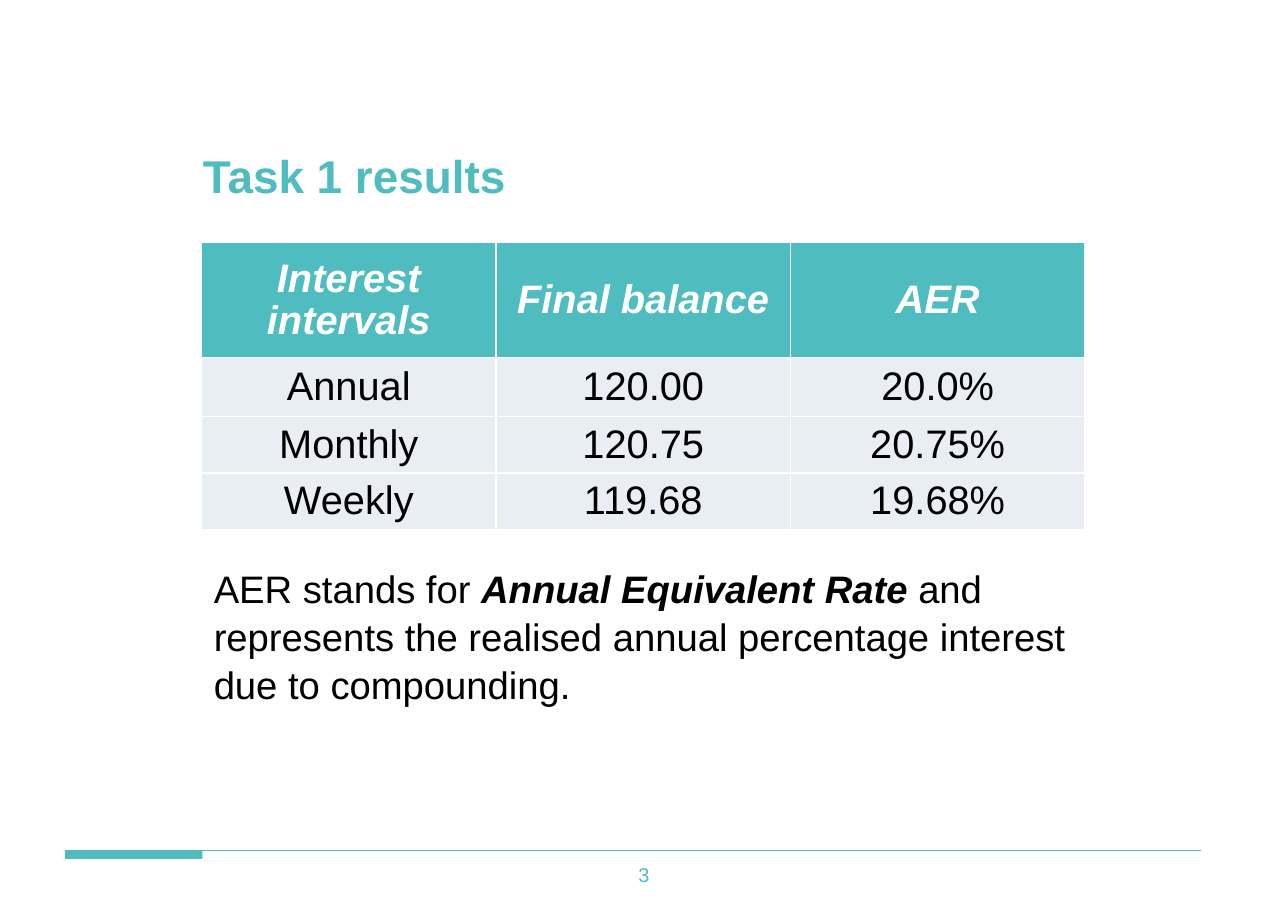
from lxml.etree import SubElement
from pptx import Presentation
from pptx.dml.color import RGBColor
from pptx.enum.shapes import MSO_CONNECTOR, MSO_SHAPE
from pptx.enum.text import MSO_ANCHOR, PP_ALIGN
from pptx.oxml.ns import qn
from pptx.util import Cm, Pt

TEAL, WHITE, BLACK, PALE = "4FBCBF", "FFFFFF", "000000", "E9EDF4"

TITLE = [("Task 1 results", {"bold": True})]
RESULTS = [
    ("Interest intervals", "Final balance", "AER"),
    ("Annual", "120.00", "20.0%"),
    ("Monthly", "120.75", "20.75%"),
    ("Weekly", "119.68", "19.68%"),
]
NOTE = [
    ("AER stands for ", {}),
    ("Annual Equivalent Rate ", {"bold": True, "italic": True}),
    ("and represents the realised annual percentage interest due to compounding.", {}),
]
PAGE = [("3", {})]

PAGE_W, PAGE_H, MARGIN = 29.7, 21, 1.5
LEFT, CONTENT_W = 4.65, 20.37
ROW_HEIGHTS = (2.65, 1.36, 1.3, 1.3)
RULE_Y = 19.6
PAGE_BOX_W = 6.93


def rgb(value):
    return RGBColor.from_string(value)


def paint(sp, color):
    sp.fill.solid()
    sp.fill.fore_color.rgb = rgb(color)


def write(tf, runs, size, color, spacing=1, align=PP_ALIGN.LEFT):
    p = tf.paragraphs[0]
    for name, value in {"alignment": align, "line_spacing": spacing}.items():
        setattr(p, name, value)
    for text, style in runs:
        r = p.add_run()
        r.text = text
        font = {"name": "Arial", "size": Pt(size), "bold": False, "italic": False}
        for name, value in (font | style).items():
            setattr(r.font, name, value)
        r.font.color.rgb = rgb(color)


def set_insets(target, left, top, right, bottom):
    insets = {"left": left, "top": top, "right": right, "bottom": bottom}
    for side, value in insets.items():
        setattr(target, f"margin_{side}", Cm(value))


def add_text(s, box, insets, runs, size, color, anchor=MSO_ANCHOR.TOP, **layout):
    tf = s.shapes.add_textbox(*map(Cm, box)).text_frame
    tf.word_wrap = True
    tf.vertical_anchor = anchor
    set_insets(tf, *insets)
    write(tf, runs, size, color, **layout)


def add_borders(cell, color):
    """Put a 1 pt line on all four sides, ahead of the cell fill."""
    tc_pr = cell._tc.get_or_add_tcPr()
    for i, side in enumerate(("lnL", "lnR", "lnT", "lnB")):
        ln = SubElement(tc_pr, qn(f"a:{side}"), w=str(Pt(1)))
        fill = SubElement(ln, qn("a:solidFill"))
        SubElement(fill, qn("a:srgbClr"), val=color)
        tc_pr.insert(i, ln)


def add_results(s):
    rows, cols = len(RESULTS), len(RESULTS[0])
    box = (LEFT, 5.59, CONTENT_W, sum(ROW_HEIGHTS))
    table = s.shapes.add_table(rows, cols, *map(Cm, box)).table
    for col in table.columns:
        col.width = Cm(CONTENT_W / cols)
    for i, (row, height) in enumerate(zip(RESULTS, ROW_HEIGHTS)):
        table.rows[i].height = Cm(height)
        head = i == 0
        style = {"bold": head, "italic": head}
        for j, text in enumerate(row):
            cell = table.cell(i, j)
            cell.vertical_anchor = MSO_ANCHOR.MIDDLE
            set_insets(cell, 0.03, 0.03, 0.03, 0)
            paint(cell, TEAL if head else PALE)
            add_borders(cell, WHITE)
            write(cell.text_frame, [(text, style)], 26, WHITE if head else BLACK,
                  spacing=0.96, align=PP_ALIGN.CENTER)


def add_footer(s):
    rule = s.shapes.add_connector(MSO_CONNECTOR.STRAIGHT, Cm(MARGIN), Cm(RULE_Y),
                                  Cm(PAGE_W - MARGIN - 0.5), Cm(RULE_Y))
    rule.line.color.rgb = rgb(TEAL)
    rule.line.width = Pt(1)
    SubElement(rule._element.spPr, qn("a:effectLst"))
    bar = s.shapes.add_shape(MSO_SHAPE.RECTANGLE,
                             *map(Cm, (MARGIN, RULE_Y, 3.17, 0.2)))
    bar.shadow.inherit = False
    paint(bar, TEAL)
    bar.line.fill.background()
    box = ((PAGE_W - PAGE_BOX_W) / 2, RULE_Y, PAGE_BOX_W, 1.12)
    add_text(s, box, (0.25, 0.13, 0.25, 0.13), PAGE, 13, TEAL,
             anchor=MSO_ANCHOR.MIDDLE, align=PP_ALIGN.CENTER)


def main():
    prs = Presentation()
    prs.slide_width, prs.slide_height = Cm(PAGE_W), Cm(PAGE_H)
    s = prs.slides.add_slide(prs.slide_layouts[6])
    add_text(s, (LEFT + 0.03, 3.3, CONTENT_W, 1.63), (0, 0, 0, 0), TITLE, 30, TEAL,
             spacing=1.08)
    add_results(s)
    add_text(s, (LEFT, 12.83, CONTENT_W, 3.5), (0.28, 0.15, 0.28, 0.15), NOTE, 25,
             BLACK, spacing=1.05)
    add_footer(s)
    prs.save("out.pptx")


if __name__ == "__main__":
    main()
